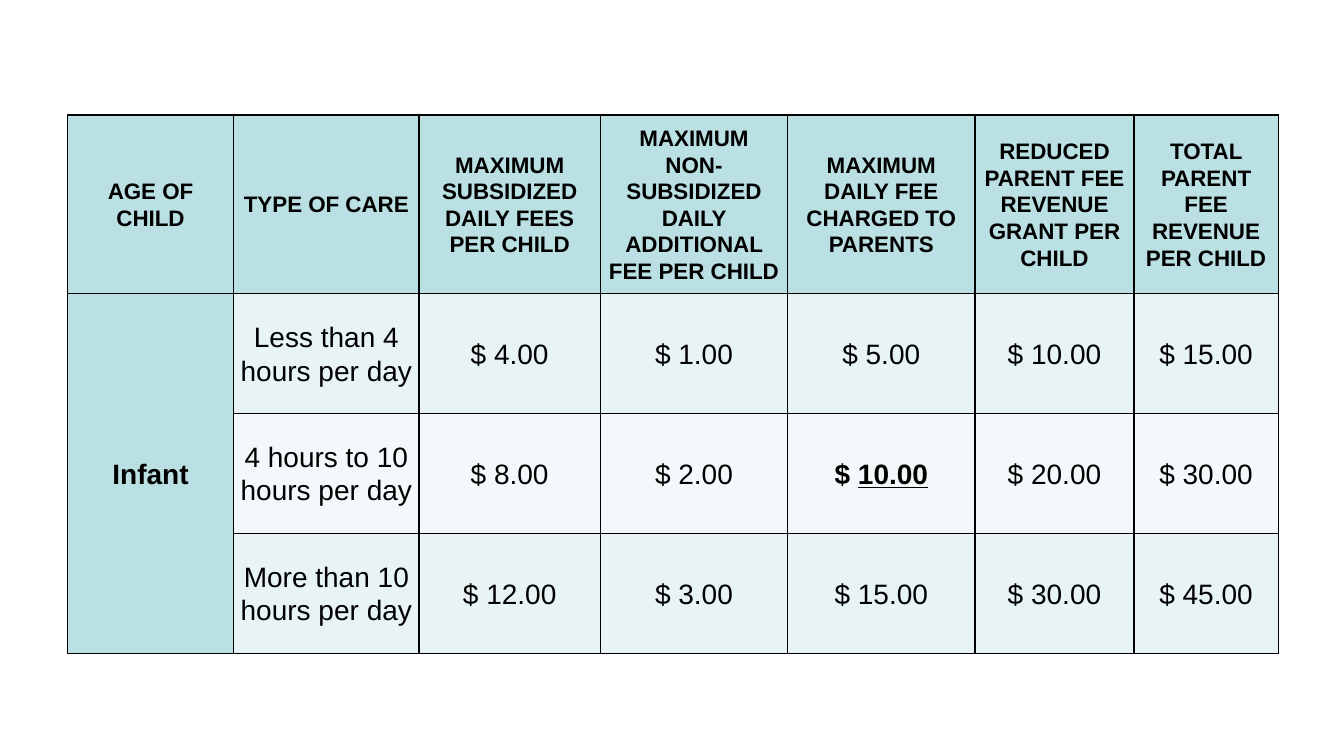
from lxml.etree import SubElement
from pptx import Presentation
from pptx.dml.color import RGBColor
from pptx.enum.text import MSO_ANCHOR, PP_ALIGN
from pptx.oxml.ns import qn
from pptx.util import Cm, Pt

BLACK = RGBColor(0x00, 0x00, 0x00)
TEAL = RGBColor(0xBB, 0xE0, 0xE3)
PALE_TEAL = RGBColor(0xE7, 0xF3, 0xF4)
FAINT_TEAL = RGBColor(0xF3, 0xF9, 0xFA)

COLUMN_WIDTHS = [4.19, 4.67, 4.57, 4.72, 4.72, 4.01, 3.63]
ROW_HEIGHTS = [4.5, 3.02, 3.02, 3.02]
HEADINGS = [
    "AGE OF CHILD",
    "TYPE OF CARE",
    "MAXIMUM SUBSIDIZED DAILY FEES PER CHILD",
    "MAXIMUM\nNON-SUBSIDIZED DAILY ADDITIONAL FEE PER CHILD",
    "MAXIMUM DAILY FEE CHARGED TO PARENTS",
    "REDUCED PARENT FEE REVENUE GRANT PER CHILD",
    "TOTAL PARENT FEE REVENUE PER CHILD",
]
FEES = [
    ["Infant", "Less than 4 hours per day", "$ 4.00", "$ 1.00", "$ 5.00", "$ 10.00", "$ 15.00"],
    ["", "4 hours to 10 hours per day", "$ 8.00", "$ 2.00", "$ 10.00", "$ 20.00", "$ 30.00"],
    ["", "More than 10 hours per day", "$ 12.00", "$ 3.00", "$ 15.00", "$ 30.00", "$ 45.00"],
]
KEY_FEE = (2, 4)


def write_cell(cell, text, size=20, bold=False, underline_amount=False, fill=PALE_TEAL):
    properties = cell._tc.get_or_add_tcPr()
    for side in ("lnL", "lnR", "lnT", "lnB"):
        border = SubElement(properties, qn(f"a:{side}"), w=str(Pt(1)))
        color = SubElement(SubElement(border, qn("a:solidFill")), qn("a:srgbClr"))
        color.set("val", str(BLACK))
    cell.fill.solid()
    cell.fill.fore_color.rgb = fill
    cell.vertical_anchor = MSO_ANCHOR.MIDDLE
    cell.margin_left = cell.margin_right = Cm(0.15)
    cell.margin_top = cell.margin_bottom = 0
    para = cell.text_frame.paragraphs[0]
    para.alignment = PP_ALIGN.CENTER
    para.line_spacing = 1.07
    if underline_amount:
        sign, amount = text.split()
        para.add_run().text = sign + " "
        span = para.add_run()
        span.text = amount
        span.font.underline = True
    else:
        para.text = text
    for span in para.runs:
        span.font.name = "Arial"
        span.font.size = Pt(size)
        span.font.bold = bold
        span.font.color.rgb = BLACK


deck = Presentation()
deck.slide_width = Cm(33.87)
deck.slide_height = Cm(19.05)
page = deck.slides.add_slide(deck.slide_layouts[6])

table = page.shapes.add_table(
    len(ROW_HEIGHTS), len(COLUMN_WIDTHS), Cm(1.7), Cm(2.9),
    Cm(sum(COLUMN_WIDTHS)), Cm(sum(ROW_HEIGHTS)),
).table
for column, width in zip(table.columns, COLUMN_WIDTHS):
    column.width = Cm(width)
for row, height in zip(table.rows, ROW_HEIGHTS):
    row.height = Cm(height)

for column_index, heading in enumerate(HEADINGS):
    write_cell(table.cell(0, column_index), heading, size=16, bold=True, fill=TEAL)

for row_index, fees in enumerate(FEES, start=1):
    band = PALE_TEAL if row_index % 2 else FAINT_TEAL
    for column_index, text in enumerate(fees):
        is_age = column_index == 0
        is_key = (row_index, column_index) == KEY_FEE
        write_cell(
            table.cell(row_index, column_index), text, bold=is_age or is_key,
            underline_amount=is_key, fill=TEAL if is_age else band,
        )
table.cell(1, 0).merge(table.cell(3, 0))

deck.save("out.pptx")
